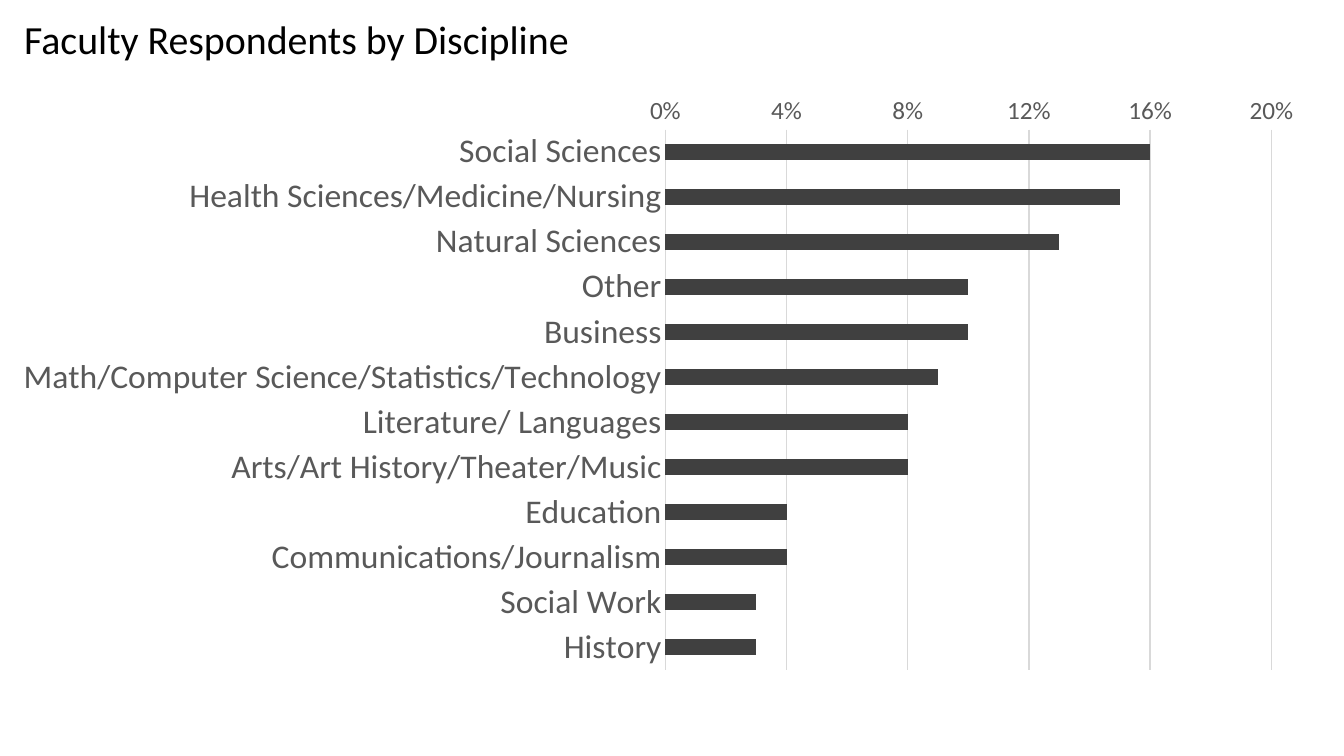
"""Build a slide with a bar chart of faculty respondents by discipline."""
import lxml.etree
import pptx
import pptx.chart.data
import pptx.dml.color
import pptx.enum.chart
import pptx.enum.text
import pptx.oxml.ns
import pptx.util
from pptx.util import Cm

TITLE = "Faculty Respondents by Discipline"
RESPONDENTS = [
    ("Social Sciences", 0.16),
    ("Health Sciences/Medicine/Nursing", 0.15),
    ("Natural Sciences", 0.13),
    ("Other", 0.10),
    ("Business", 0.10),
    ("Math/Computer Science/Statistics/Technology", 0.09),
    ("Literature/ Languages", 0.08),
    ("Arts/Art History/Theater/Music", 0.08),
    ("Education", 0.04),
    ("Communications/Journalism", 0.04),
    ("Social Work", 0.03),
    ("History", 0.03),
]
FONT = "Calibri"
BLACK, BAR, LABEL, GRID = "000000", "404040", "595959", "D9D9D9"
TITLE_BOX = (Cm(0.48), Cm(0.43), Cm(26.39), Cm(1.24))
CHART_BOX = (Cm(0.2), Cm(2.41), Cm(32.49), Cm(15.54))
PLOT_AREA = {"x": 0.51, "y": 0.04, "w": 0.47, "h": 0.89}


def color(hex_string):
    return pptx.dml.color.RGBColor.from_string(hex_string)


def format_font(font, size, fill, name=FONT):
    font.size = pptx.util.Pt(size)
    font.name = name
    font.bold = False
    font.color.rgb = color(fill)


def write_text(shape, text, size, fill, align, line_spacing):
    frame = shape.text_frame
    frame.word_wrap = True
    frame.auto_size = pptx.enum.text.MSO_AUTO_SIZE.NONE
    frame.vertical_anchor = pptx.enum.text.MSO_ANCHOR.MIDDLE
    frame.margin_left = frame.margin_right = Cm(0.13)
    frame.margin_top = frame.margin_bottom = Cm(0.13)
    paragraph = frame.paragraphs[0]
    paragraph.alignment = align
    paragraph.line_spacing = line_spacing
    run = paragraph.add_run()
    run.text = text
    format_font(run.font, size, fill)


def format_line(line, fill):
    line.color.rgb = color(fill)
    line.width = pptx.util.Pt(1)


def place_plot(chart, fractions):
    qn = pptx.oxml.ns.qn
    plot_area = chart.element.find(".//" + qn("c:plotArea"))
    for old_layout in plot_area.findall(qn("c:layout")):
        plot_area.remove(old_layout)
    layout = lxml.etree.Element(qn("c:layout"))
    plot_area.insert(0, layout)
    manual = lxml.etree.SubElement(layout, qn("c:manualLayout"))
    settings = {"layoutTarget": "inner", "xMode": "edge", "yMode": "edge", **fractions}
    for tag, value in settings.items():
        lxml.etree.SubElement(manual, qn("c:" + tag)).set("val", str(value))


def add_respondent_chart(slide):
    data = pptx.chart.data.CategoryChartData(number_format="0%")
    data.categories = [discipline for discipline, share in RESPONDENTS]
    data.add_series("Series 1", [share for discipline, share in RESPONDENTS])
    chart_type = pptx.enum.chart.XL_CHART_TYPE.BAR_CLUSTERED
    chart = slide.shapes.add_chart(chart_type, *CHART_BOX, data).chart
    chart.has_title = False
    chart.has_legend = False
    format_font(chart.font, 10, BLACK, name="Arial")

    plot = chart.plots[0]
    plot.vary_by_categories = False
    plot.gap_width = 182
    bars = plot.series[0].format.fill
    bars.solid()
    bars.fore_color.rgb = color(BAR)

    disciplines, shares = chart.category_axis, chart.value_axis
    for axis, size in ((disciplines, 24), (shares, 18)):
        axis.major_tick_mark = pptx.enum.chart.XL_TICK_MARK.NONE
        axis.minor_tick_mark = pptx.enum.chart.XL_TICK_MARK.NONE
        format_font(axis.tick_labels.font, size, LABEL)
    disciplines.reverse_order = True
    disciplines.crosses = pptx.enum.chart.XL_AXIS_CROSSES.MAXIMUM
    disciplines.has_major_gridlines = False
    format_line(disciplines.format.line, GRID)

    shares.minimum_scale, shares.maximum_scale, shares.major_unit = 0, 0.2, 0.04
    shares.tick_labels.number_format = "0%"
    shares.tick_labels.number_format_is_linked = False
    shares.format.line.fill.background()
    shares.has_major_gridlines = True
    format_line(shares.major_gridlines.format.line, GRID)
    place_plot(chart, PLOT_AREA)


def main():
    presentation = pptx.Presentation()
    presentation.slide_width, presentation.slide_height = Cm(33.87), Cm(19.05)
    slide = presentation.slides.add_slide(presentation.slide_layouts[5])
    title = slide.shapes.title
    title.left, title.top, title.width, title.height = TITLE_BOX
    write_text(title, TITLE, size=28.5, fill=BLACK,
               align=pptx.enum.text.PP_ALIGN.LEFT, line_spacing=0.9)
    add_respondent_chart(slide)
    presentation.save("out.pptx")


if __name__ == "__main__":
    main()
